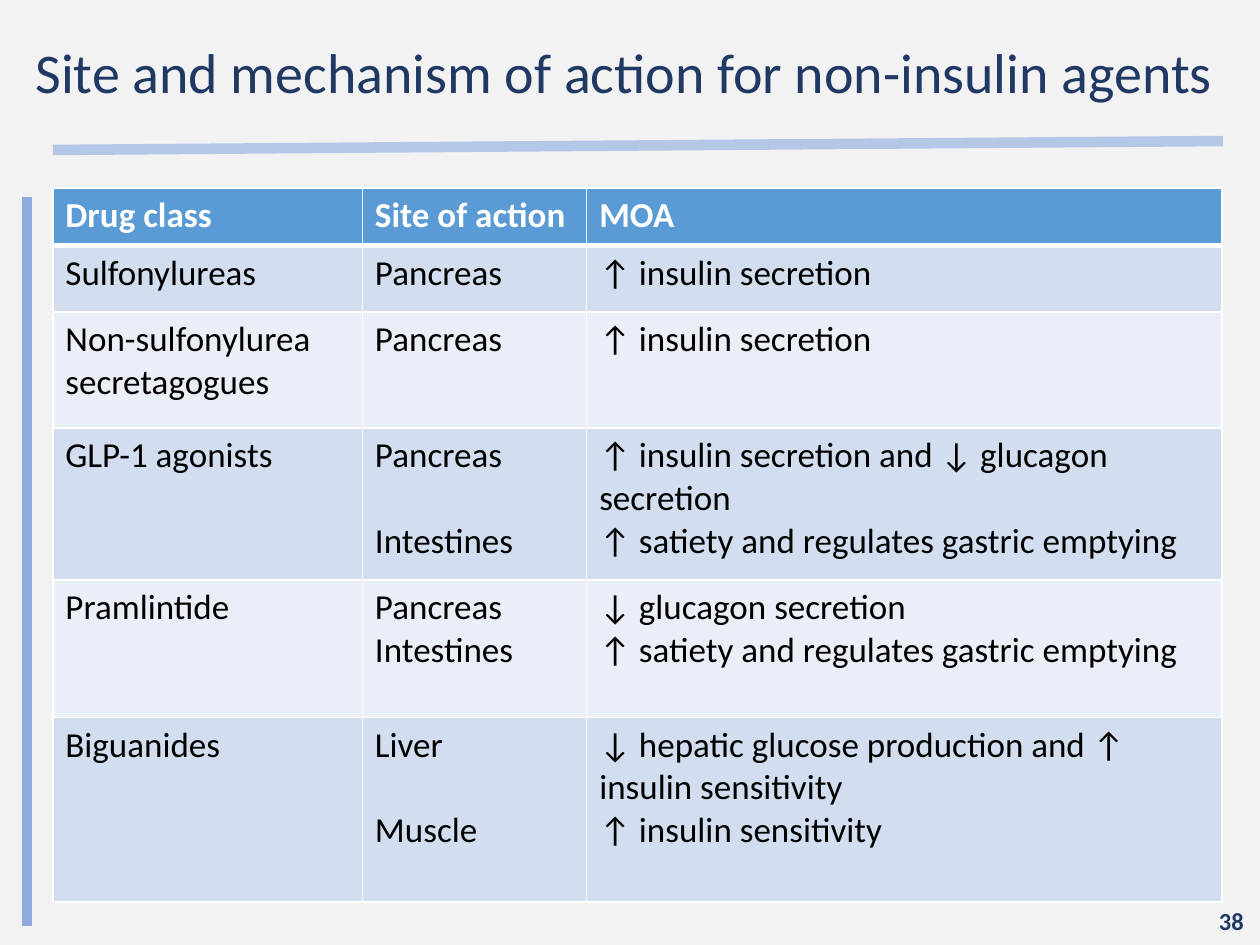
"""Build the slide on the site and mechanism of action of non-insulin agents."""
from typing import NamedTuple

from lxml.etree import SubElement as Sub
from pptx import Presentation
from pptx.dml.color import RGBColor
from pptx.enum.shapes import MSO_CONNECTOR as Conn
from pptx.enum.text import MSO_ANCHOR as Anchor, MSO_AUTO_SIZE as Fit, PP_ALIGN as Align
from pptx.oxml.ns import qn
from pptx.util import Pt

NAVY, WHITE, BLACK = "203864", "FFFFFF", "000000"
HEAD, BANDS = "5B9BD5", ("D2DEEF", "EAEFF7")
GAP = 24.4


class Rule(NamedTuple):
    x1: float
    y1: float
    x2: float
    y2: float
    color: str


class Drug(NamedTuple):
    high: float
    name: str
    sites: tuple[str, ...]
    acts: tuple[str, ...]
    gap: float = 0


RULES = (
    Rule(30.2, 85.7, 698.9, 80.6, "B4C7E7"),
    Rule(15.5, 112.8, 15.5, 529, "8FAADC"),
)
WIDTHS = (176.9, 128.2, 363)
TITLES = ("Drug class", "Site of action", "MOA")
UP, SATE = "↑ insulin secretion", "↑ satiety and regulates gastric emptying"
DRUGS = (
    Drug(37.9, "Sulfonylureas", ("Pancreas",), (UP,)),
    Drug(66.3, "Non-sulfonylurea secretagogues", ("Pancreas",), (UP,)),
    Drug(87, "GLP-1 agonists", ("Pancreas", "Intestines"),
         ("↑ insulin secretion and ↓ glucagon secretion", SATE), GAP),
    Drug(78.5, "Pramlintide", ("Pancreas", "Intestines"),
         ("↓ glucagon secretion", SATE)),
    Drug(105.4, "Biguanides", ("Liver", "Muscle"),
         ("↓ hepatic glucose production and ↑ insulin sensitivity",
          "↑ insulin sensitivity"), GAP),
)
HEAD_H = 33


def paint(form, color: str) -> None:
    """Give a fill a solid colour."""
    form.solid()
    form.fore_color.rgb = RGBColor.from_string(color)


def write(frame, *lines: str, size: float = 20, color: str = BLACK,
          bold: bool = False, align=Align.LEFT, gap: float = 0,
          space: float | None = None) -> None:
    """Write each line as a paragraph, with a gap between paragraphs."""
    frame.word_wrap = True
    for i, line in enumerate(lines):
        para = frame.add_paragraph() if i else frame.paragraphs[0]
        para.alignment = align
        if space:
            para.line_spacing = space
        if i and gap:
            para.space_before = Pt(gap)
        run = para.add_run()
        run.text = line
        font = run.font
        font.name, font.size, font.bold = "Calibri", Pt(size), bold
        font.color.rgb = RGBColor.from_string(color)


def draw(slide, rule: Rule) -> None:
    """Draw a thick straight rule."""
    line = slide.shapes.add_connector(Conn.STRAIGHT, *map(Pt, rule[:4]))
    line.line.width = Pt(6)
    paint(line.line.fill, rule.color)
    Sub(line._element.spPr, qn("a:effectLst"))


def style(cell, color: str, top: float = 1, base: float = 1) -> None:
    """Set the white borders and the fill of a cell."""
    props = cell._tc.get_or_add_tcPr()
    for side, wide in (("L", 1), ("R", 1), ("T", top), ("B", base)):
        edge = Sub(props, qn(f"a:ln{side}"), w=str(Pt(wide)))
        Sub(Sub(edge, qn("a:solidFill")), qn("a:srgbClr"), val=WHITE)
    paint(cell.fill, color)


def tabulate(slide) -> None:
    """Add the table of drug classes."""
    highs = [HEAD_H] + [drug.high for drug in DRUGS]
    grid = slide.shapes.add_table(
        len(highs), len(WIDTHS), Pt(30.2), Pt(107.3),
        Pt(sum(WIDTHS)), Pt(sum(highs))).table
    for row, high in zip(grid.rows, highs):
        row.height = Pt(high)
    for col, (wide, title) in enumerate(zip(WIDTHS, TITLES)):
        grid.columns[col].width = Pt(wide)
        cell = grid.cell(0, col)
        style(cell, HEAD, base=3)
        write(cell.text_frame, title, color=WHITE, bold=True)
    for row, drug in enumerate(DRUGS, 1):
        parts = (((drug.name,), 0), (drug.sites, drug.gap), (drug.acts, 0))
        for col, (lines, gap) in enumerate(parts):
            cell = grid.cell(row, col)
            style(cell, BANDS[(row - 1) % 2], top=3 if row == 1 else 1)
            write(cell.text_frame, *lines, gap=gap)


def main() -> None:
    """Build and save the slide."""
    deck = Presentation()
    deck.slide_width, deck.slide_height = Pt(720), Pt(540)
    slide = deck.slides.add_slide(deck.slide_layouts[5])
    paint(slide.background.fill, "F2F2F2")
    for rule in RULES:
        draw(slide, rule)

    title = slide.shapes.title
    title.left, title.top, title.width, title.height = map(Pt, (13, -2.9, 707, 92.2))
    frame = title.text_frame
    frame.auto_size, frame.vertical_anchor = Fit.NONE, Anchor.MIDDLE
    write(frame, "Site and mechanism of action for non-insulin agents",
          size=32, color=NAVY, space=0.9)

    tabulate(slide)
    page = slide.shapes.add_textbox(*map(Pt, (555.8, 511.9, 162, 28.8))).text_frame
    page.vertical_anchor = Anchor.MIDDLE
    write(page, "38", size=14, color=NAVY, bold=True, align=Align.RIGHT)
    deck.save("out.pptx")


if __name__ == "__main__":
    main()
